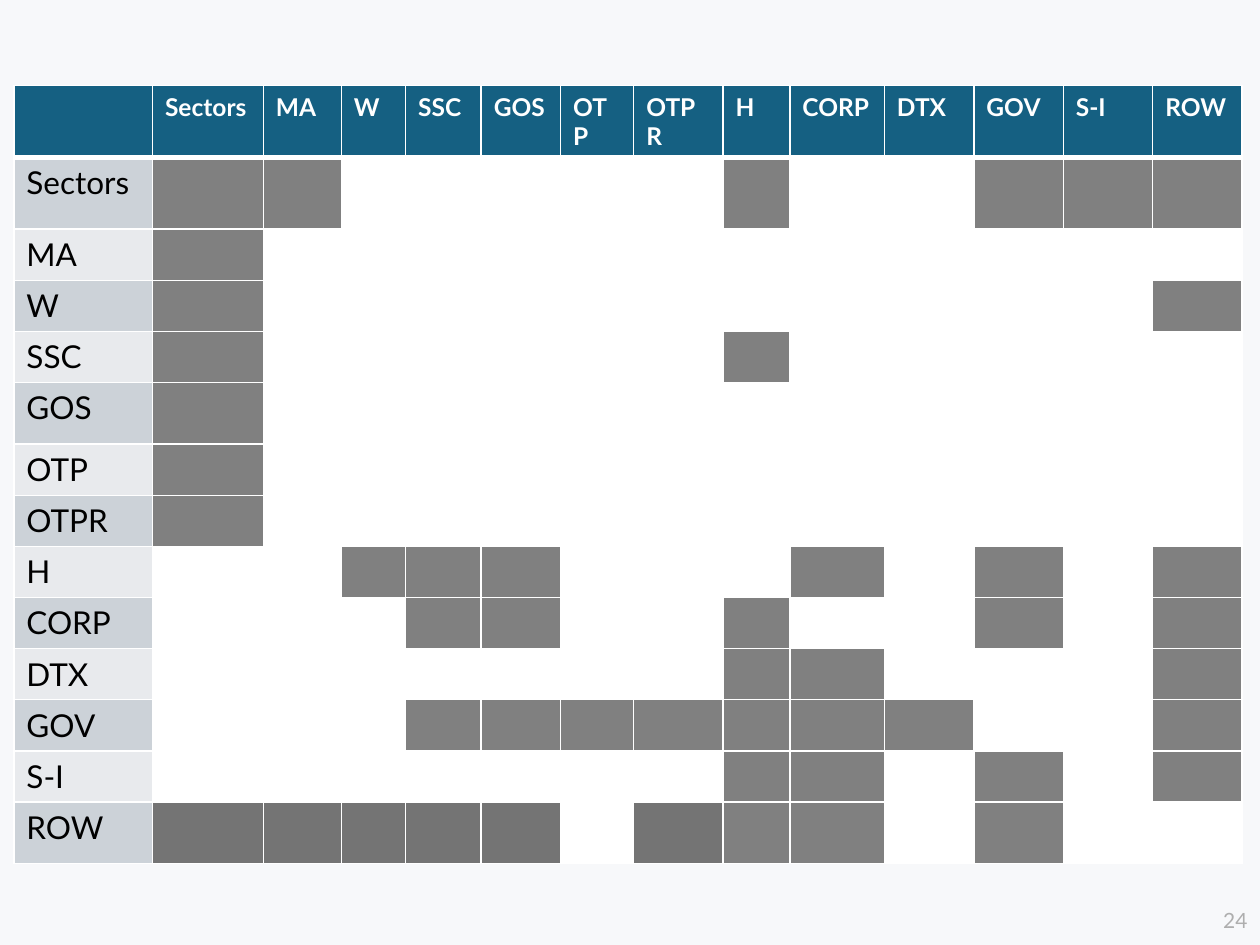
import pptx
import pptx.dml.color
import pptx.enum.text
import pptx.util
from lxml import etree
from pptx.oxml.ns import qn

ACCOUNTS = ["Sectors", "MA", "W", "SSC", "GOS", "OTP", "OTPR",
            "H", "CORP", "DTX", "GOV", "S-I", "ROW"]
FLOWS = [
    "##.....#..###",
    "#............",
    "#...........#",
    "#......#.....",
    "#............",
    "#............",
    "#............",
    "..###...#.#.#",
    "...##..#..#.#",
    ".......##...#",
    "...#######..#",
    ".......##.#.#",
    "+++++.+##.#..",
]
PAGE_NUMBER = "24"

COLUMN_WIDTHS = [1.1, 0.88, 0.62, 0.51, 0.6, 0.63, 0.58, 0.71, 0.53, 0.75] + [0.71] * 4
DEFAULT_ROW_HEIGHT = 0.4
ROW_HEIGHTS = {"": 0.57, "Sectors": 0.57, "GOS": 0.49, "ROW": 0.49}

THEME = {
    "font": "Lato",
    "background": "F7F8FA",
    "header": "156082",
    "header_text": "FFFFFF",
    "bands": ["CCD2D8", "E8EAED"],
    "label_text": "000000",
    "page_text": "AEAEAE",
    "border": "FFFFFF",
    "flows": {"#": "808080", "+": "747474", ".": "FFFFFF"},
    "header_size": 14,
    "label_size": 18,
    "page_size": 12,
}


def color(value):
    return pptx.dml.color.RGBColor.from_string(value)


def write_text(text_frame, text, size, text_color, bold=False):
    text_frame.text = text
    for run in text_frame.paragraphs[0].runs:
        run.font.name = THEME["font"]
        run.font.size = pptx.util.Pt(size)
        run.font.bold = bold
        run.font.color.rgb = color(text_color)


def add_borders(cell, top, bottom):
    properties = cell._tc.get_or_add_tcPr()
    for side, points in (("L", 1), ("R", 1), ("T", top), ("B", bottom)):
        line = etree.SubElement(properties, qn(f"a:ln{side}"), w=str(pptx.util.Pt(points)))
        fill = etree.SubElement(line, qn("a:solidFill"))
        etree.SubElement(fill, qn("a:srgbClr"), val=THEME["border"])


def style_cell(cell, fill_color, top=1, bottom=1):
    add_borders(cell, top, bottom)
    cell.fill.solid()
    cell.fill.fore_color.rgb = color(fill_color)


def add_matrix(slide):
    labels = [""] + ACCOUNTS
    heights = [ROW_HEIGHTS.get(label, DEFAULT_ROW_HEIGHT) for label in labels]
    table = slide.shapes.add_table(
        len(labels), len(labels), pptx.util.Inches(0.11), pptx.util.Inches(0.68),
        pptx.util.Inches(sum(COLUMN_WIDTHS)), pptx.util.Inches(sum(heights))).table
    for column, width in zip(table.columns, COLUMN_WIDTHS):
        column.width = pptx.util.Inches(width)
    for row, height in zip(table.rows, heights):
        row.height = pptx.util.Inches(height)

    for index, label in enumerate(labels):
        cell = table.cell(0, index)
        write_text(cell.text_frame, label, THEME["header_size"], THEME["header_text"], True)
        style_cell(cell, THEME["header"], bottom=3)

    for index, (account, flows) in enumerate(zip(ACCOUNTS, FLOWS)):
        top = 3 if index == 0 else 1
        label_cell = table.cell(index + 1, 0)
        write_text(label_cell.text_frame, account, THEME["label_size"], THEME["label_text"])
        style_cell(label_cell, THEME["bands"][index % 2], top=top)
        for column, flow in enumerate(flows, start=1):
            style_cell(table.cell(index + 1, column), THEME["flows"][flow], top=top)


def add_page_number(slide):
    box = slide.shapes.add_textbox(*map(pptx.util.Inches, (9.44, 7.12, 0.56, 0.36)))
    text_frame = box.text_frame
    text_frame.word_wrap = True
    text_frame.vertical_anchor = pptx.enum.text.MSO_ANCHOR.MIDDLE
    write_text(text_frame, PAGE_NUMBER, THEME["page_size"], THEME["page_text"])
    text_frame.paragraphs[0].alignment = pptx.enum.text.PP_ALIGN.RIGHT


def main():
    presentation = pptx.Presentation()
    presentation.slide_width = pptx.util.Inches(10)
    presentation.slide_height = pptx.util.Inches(7.5)
    slide = presentation.slides.add_slide(presentation.slide_layouts[6])
    slide.background.fill.solid()
    slide.background.fill.fore_color.rgb = color(THEME["background"])
    add_matrix(slide)
    add_page_number(slide)
    presentation.save("out.pptx")


if __name__ == "__main__":
    main()
